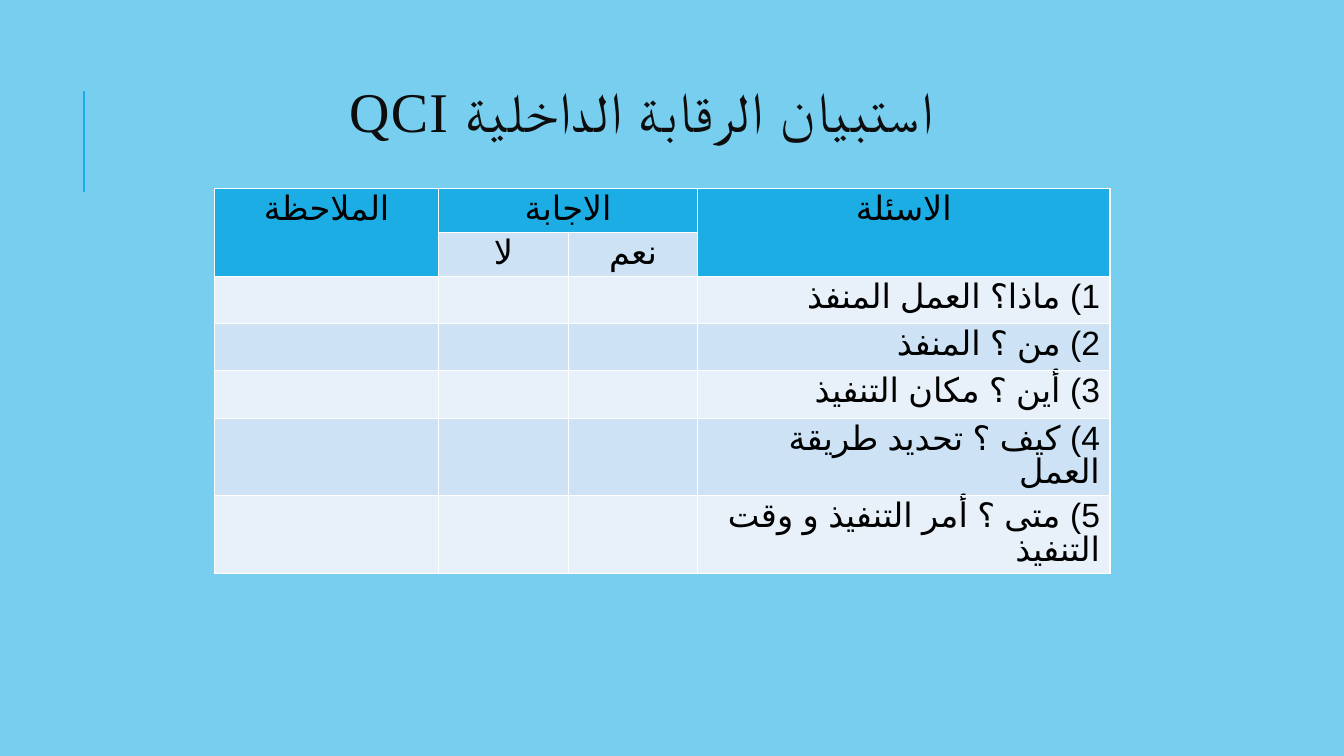
from pptx import Presentation
from pptx.dml.color import RGBColor
from pptx.enum.shapes import MSO_CONNECTOR
from pptx.enum.text import MSO_ANCHOR, MSO_AUTO_SIZE, PP_ALIGN
from pptx.util import Inches, Pt
from lxml.etree import SubElement
from pptx.oxml.ns import qn

SERIF, SANS = "Times New Roman", "Arial"
BACKGROUND, ACCENT, BAND_DARK, BAND_LIGHT = "77CEEF", "1CADE4", "CDE3F5", "E8F1FA"
INK, BLACK = "0D0D0D", "000000"

COLUMNS = [2.22, 1.29, 1.28, 4.09]
ROWS = [0.43] * 2 + [0.47] * 3 + [0.77] * 2
HEADINGS = [
    ["الملاحظة", "الاجابة", "", "الاسئلة"],
    ["", "لا", "نعم", ""],
]
QUESTIONS = [
    "1) ماذا؟ العمل المنفذ",
    "2) من ؟ المنفذ",
    "3) أين ؟ مكان التنفيذ",
    "4) كيف ؟ تحديد طريقة العمل",
    "5) متى ؟ أمر التنفيذ و وقت التنفيذ",
]
# First and last cell of each merged heading
MERGES = [((0, 0), (1, 0)), ((0, 1), (0, 2)), ((0, 3), (1, 3))]


def color(hex_value):
    return RGBColor.from_string(hex_value)


def paint(fill, hex_value):
    fill.solid()
    fill.fore_color.rgb = color(hex_value)


def write(para, text, size, ink, arabic_font, **layout):
    for name, value in layout.items():
        setattr(para, name, value)
    span = para.add_run()
    span.text = text
    for name, value in {"name": SERIF, "size": Pt(size), "bold": False}.items():
        setattr(span.font, name, value)
    span.font.color.rgb = color(ink)
    # Arabic letters take the complex-script font and language
    properties = span.font._element
    properties.set("lang", "ar-DZ")
    SubElement(properties, qn("a:cs")).set("typeface", arabic_font)
    return span


def add_title(page, text):
    box = page.shapes.title
    place = {"left": 1.12, "top": 0.64, "width": 10.63, "height": 1.02}
    for name, value in place.items():
        setattr(box, name, Inches(value))
    frame = box.text_frame
    frame.auto_size = MSO_AUTO_SIZE.NONE
    frame.vertical_anchor = MSO_ANCHOR.MIDDLE
    span = write(frame.paragraphs[0], text, 40, INK, SERIF,
                 alignment=PP_ALIGN.CENTER, line_spacing=0.8)
    span.font._element.set("spc", "100")


def add_rule(page, x, top, bottom):
    rule = page.shapes.add_connector(
        MSO_CONNECTOR.STRAIGHT, *map(Inches, (x, bottom, x, top)))
    rule.line.color.rgb = color(ACCENT)
    rule.line.width = Pt(1.5)
    SubElement(rule._element.spPr, qn("a:effectLst"))


def fill_cell(cell, text, shade, alignment):
    paint(cell.fill, shade)
    if text:
        para = cell.text_frame.paragraphs[0]
        write(para, text, 24, BLACK, SANS, alignment=alignment, line_spacing=0.9)
        para._p.get_or_add_pPr().set("rtl", "1")


def add_questionnaire(page, left, top):
    contents = HEADINGS + [["", "", "", question] for question in QUESTIONS]
    table = page.shapes.add_table(
        len(ROWS), len(COLUMNS), Inches(left), Inches(top),
        Inches(sum(COLUMNS)), Inches(sum(ROWS))).table
    for column, width in zip(table.columns, COLUMNS):
        column.width = Inches(width)
    for row, height in zip(table.rows, ROWS):
        row.height = Inches(height)
    for first, last in MERGES:
        table.cell(*first).merge(table.cell(*last))

    # Accent heading, then alternating bands
    for r, texts in enumerate(contents):
        band = ACCENT if r == 0 else BAND_DARK if r % 2 else BAND_LIGHT
        alignment = PP_ALIGN.CENTER if r < len(HEADINGS) else PP_ALIGN.RIGHT
        for c, text in enumerate(texts):
            fill_cell(table.cell(r, c), text, band, alignment)


def main():
    deck = Presentation()
    deck.slide_width, deck.slide_height = Inches(13.33), Inches(7.5)
    page = deck.slides.add_slide(deck.slide_layouts.get_by_name("Title Only"))
    paint(page.background.fill, BACKGROUND)
    add_rule(page, 0.83, 0.9, 1.9)
    add_title(page, "QCI استبيان الرقابة الداخلية ")
    add_questionnaire(page, 2.13, 1.87)
    deck.save("out.pptx")


if __name__ == "__main__":
    main()
